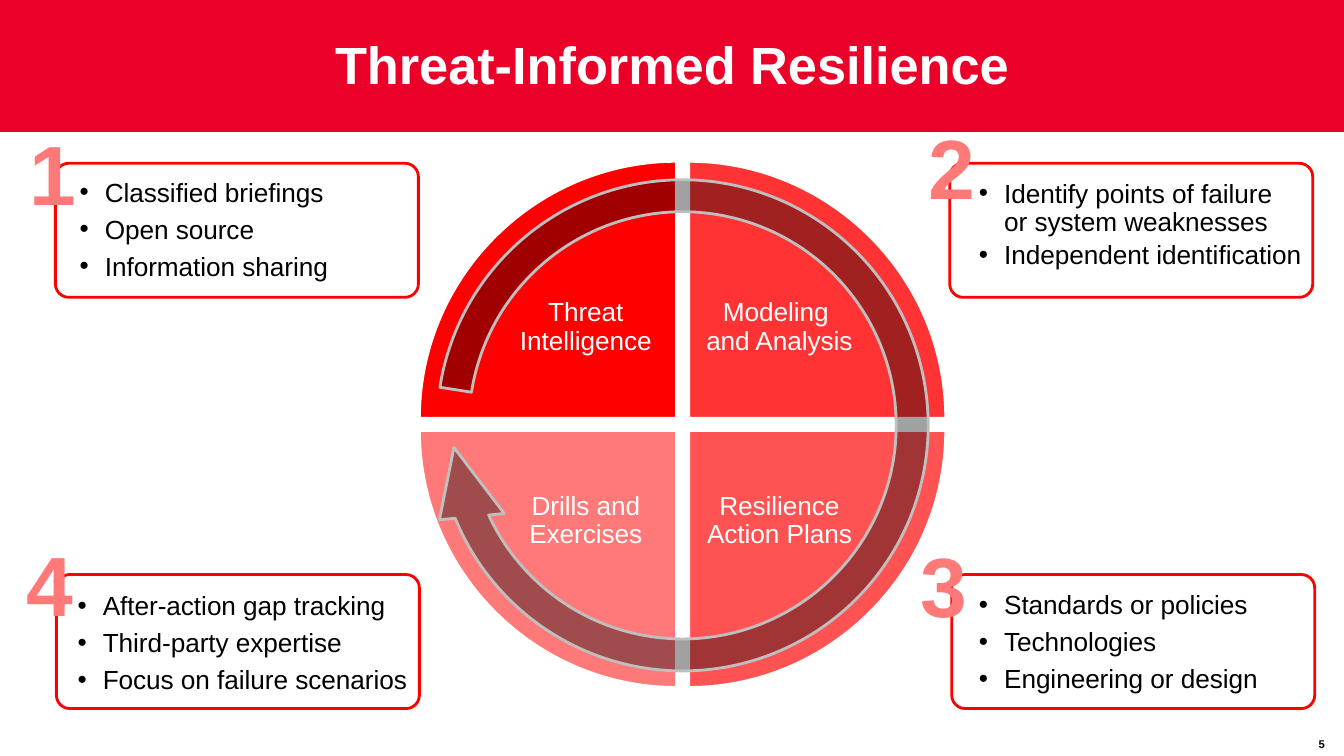
"""Build the Threat-Informed Resilience cycle slide."""
from dataclasses import dataclass
from typing import Optional

from lxml.etree import SubElement
from pptx import Presentation
from pptx.dml.color import RGBColor
from pptx.enum.shapes import MSO_SHAPE
from pptx.enum.text import MSO_ANCHOR, PP_ALIGN
from pptx.oxml.ns import qn
from pptx.util import Inches, Pt

BLACK = RGBColor(0x00, 0x00, 0x00)
WHITE = RGBColor(0xFF, 0xFF, 0xFF)
BANNER_RED = RGBColor(0xEA, 0x00, 0x29)
RED = RGBColor(0xFF, 0x00, 0x00)
BRIGHT_RED = RGBColor(0xFF, 0x33, 0x33)
SOFT_RED = RGBColor(0xFF, 0x53, 0x53)
PINK = RGBColor(0xFF, 0x79, 0x79)
SILVER = RGBColor(0xBF, 0xBF, 0xBF)

FONT = "Arial"
BODY_SIZE = 18.67
CENTER_X, CENTER_Y = 6.77, 4.21
RADIUS, HALF_GAP = 2.55, 0.06
ARC_HANDLE = 0.55
OUTER_INSET, INNER_INSET = 0.92, 0.17


@dataclass(frozen=True)
class Quadrant:
    text: str
    color: RGBColor
    side_x: int
    side_y: int


@dataclass(frozen=True)
class Card:
    number: str
    items: tuple[str, ...]
    box: tuple[float, float]
    number_at: tuple[float, float]
    list_at: tuple[float, float, float, float]
    line_spacing: Optional[float] = None


QUADRANTS = (
    Quadrant("Threat Intelligence", RED, -1, -1),
    Quadrant("Modeling \nand Analysis", BRIGHT_RED, 1, -1),
    Quadrant("Resilience Action Plans", SOFT_RED, 1, 1),
    Quadrant("Drills and Exercises", PINK, -1, 1),
)

CARDS = (
    Card("1", ("Classified briefings", "Open source", "Information sharing"),
         (0.55, 1.62), (0.15, 1.14), (0.74, 1.7, 3.38, 1.13)),
    Card("2", ("Identify points of failure \nor system weaknesses",
               "Independent identification"),
         (9.42, 1.62), (9.07, 1.08), (9.66, 1.74, 3.6, 1.25), 20),
    Card("3", ("Standards or policies", "Technologies", "Engineering or design"),
         (9.44, 5.7), (8.99, 5.22), (9.66, 5.79, 3.33, 1.19)),
    Card("4", ("After-action gap tracking", "Third-party expertise",
               "Focus on failure scenarios"),
         (0.56, 5.7), (0.12, 5.21), (0.72, 5.8, 3.43, 1.15)),
)


def style_shape(shape, fill: RGBColor, line: Optional[RGBColor] = None) -> None:
    shape.shadow.inherit = False
    shape.fill.solid()
    shape.fill.fore_color.rgb = fill
    if line is None:
        shape.line.fill.background()
    else:
        shape.line.color.rgb = line
        shape.line.width = Pt(2)


def set_frame(shape, insets: tuple[float, float, float, float],
              anchor=MSO_ANCHOR.TOP, wrap: bool = True):
    frame = shape.text_frame
    frame.word_wrap = wrap
    frame.vertical_anchor = anchor
    (frame.margin_left, frame.margin_top,
     frame.margin_right, frame.margin_bottom) = map(Inches, insets)
    return frame


def add_text(paragraph, text: str, size: float, color: RGBColor,
             bold: bool = False) -> None:
    for index, line in enumerate(text.split("\n")):
        if index:
            paragraph.add_line_break()
        run = paragraph.add_run()
        run.text = line
        run.font.name = FONT
        run.font.size = Pt(size)
        run.font.bold = bold
        run.font.color.rgb = color


def add_bullet(paragraph) -> None:
    properties = paragraph._p.get_or_add_pPr()
    properties.set("marL", str(Inches(0.25)))
    properties.set("indent", str(Inches(-0.25)))
    SubElement(properties, qn("a:buFont")).set("typeface", FONT)
    SubElement(properties, qn("a:buChar")).set("char", "•")


def add_title(slide) -> None:
    banner = slide.shapes.add_shape(
        MSO_SHAPE.RECTANGLE, 0, 0, Inches(13.33), Inches(1.31))
    style_shape(banner, BANNER_RED)
    frame = set_frame(banner, (0.1, 0.05, 0.1, 0.05), MSO_ANCHOR.MIDDLE)
    paragraph = frame.paragraphs[0]
    paragraph.alignment = PP_ALIGN.CENTER
    paragraph.line_spacing = Pt(41.3)
    add_text(paragraph, "Threat-Informed Resilience", 37.33, WHITE, bold=True)


def round_first_side(wedge, handles: list[tuple[float, float]]) -> None:
    """Turn the first straight side of a wedge into a curve."""
    side = next(wedge._element.iter(qn("a:lnTo")))
    side.tag = qn("a:cubicBezTo")
    for index, (x, y) in enumerate(handles):
        point = SubElement(side, qn("a:pt"))
        point.set("x", str(Inches(x) - wedge.left))
        point.set("y", str(Inches(y) - wedge.top))
        side.insert(index, point)


def add_quadrant(slide, quadrant: Quadrant) -> None:
    corner_x = CENTER_X + quadrant.side_x * HALF_GAP
    corner_y = CENTER_Y + quadrant.side_y * HALF_GAP
    reach_x, reach_y = quadrant.side_x * RADIUS, quadrant.side_y * RADIUS
    far_x, far_y = corner_x + reach_x, corner_y + reach_y
    builder = slide.shapes.build_freeform(Inches(far_x), Inches(corner_y))
    builder.add_line_segments([(Inches(corner_x), Inches(far_y)),
                               (Inches(corner_x), Inches(corner_y))], close=True)
    wedge = builder.convert_to_shape()
    round_first_side(wedge, [(far_x, corner_y + ARC_HANDLE * reach_y),
                             (corner_x + ARC_HANDLE * reach_x, far_y)])
    style_shape(wedge, quadrant.color, WHITE)
    left, right = (OUTER_INSET, INNER_INSET)[::-quadrant.side_x]
    top, bottom = (OUTER_INSET, INNER_INSET)[::-quadrant.side_y]
    frame = set_frame(wedge, (left, top, right, bottom), MSO_ANCHOR.MIDDLE)
    paragraph = frame.paragraphs[0]
    paragraph.alignment = PP_ALIGN.CENTER
    paragraph.line_spacing = 0.9
    add_text(paragraph, quadrant.text, BODY_SIZE, WHITE)


def add_cycle_arrow(slide) -> None:
    arrow = slide.shapes.add_shape(
        MSO_SHAPE.CIRCULAR_ARROW, Inches(4.17), Inches(1.62), Inches(5.2), Inches(5.2))
    arrow.rotation = 358
    for index, value in enumerate((0.061, 10.739, 95.138, 114.554, 0.062)):
        arrow.adjustments[index] = value
    style_shape(arrow, BLACK, SILVER)
    color = arrow._element.spPr.find(qn("a:solidFill"))[0]
    SubElement(color, qn("a:alpha")).set("val", "37000")


def add_card(slide, card: Card) -> None:
    box = slide.shapes.add_shape(
        MSO_SHAPE.ROUNDED_RECTANGLE, *map(Inches, (*card.box, 3.6, 1.33)))
    box.adjustments[0] = 0.1
    style_shape(box, WHITE, RED)

    number = slide.shapes.add_textbox(*map(Inches, (*card.number_at, 0.74, 1.14)))
    frame = set_frame(number, (0.13, 0.07, 0.13, 0.07), wrap=False)
    frame.paragraphs[0].alignment = PP_ALIGN.CENTER
    add_text(frame.paragraphs[0], card.number, 60, PINK, bold=True)

    bullets = slide.shapes.add_textbox(*map(Inches, card.list_at))
    frame = set_frame(bullets, (0.05, 0.05, 0.05, 0.05))
    for index, item in enumerate(card.items):
        paragraph = frame.add_paragraph() if index else frame.paragraphs[0]
        add_bullet(paragraph)
        paragraph.space_after = Pt(4)
        if card.line_spacing:
            paragraph.line_spacing = Pt(card.line_spacing)
        add_text(paragraph, item, BODY_SIZE, BLACK)


def add_page_number(slide) -> None:
    box = slide.shapes.add_textbox(
        Inches(12.89), Inches(7.26), Inches(0.44), Inches(0.24))
    frame = set_frame(box, (0.13, 0.07, 0.13, 0.07), MSO_ANCHOR.MIDDLE)
    frame.paragraphs[0].alignment = PP_ALIGN.CENTER
    add_text(frame.paragraphs[0], "5", 8, BLACK, bold=True)


def main() -> None:
    presentation = Presentation()
    presentation.slide_width = Inches(13.33)
    presentation.slide_height = Inches(7.5)
    slide = presentation.slides.add_slide(presentation.slide_layouts[6])
    add_title(slide)
    for quadrant in QUADRANTS:
        add_quadrant(slide, quadrant)
    add_cycle_arrow(slide)
    for card in CARDS:
        add_card(slide, card)
    add_page_number(slide)
    presentation.save("out.pptx")


if __name__ == "__main__":
    main()
